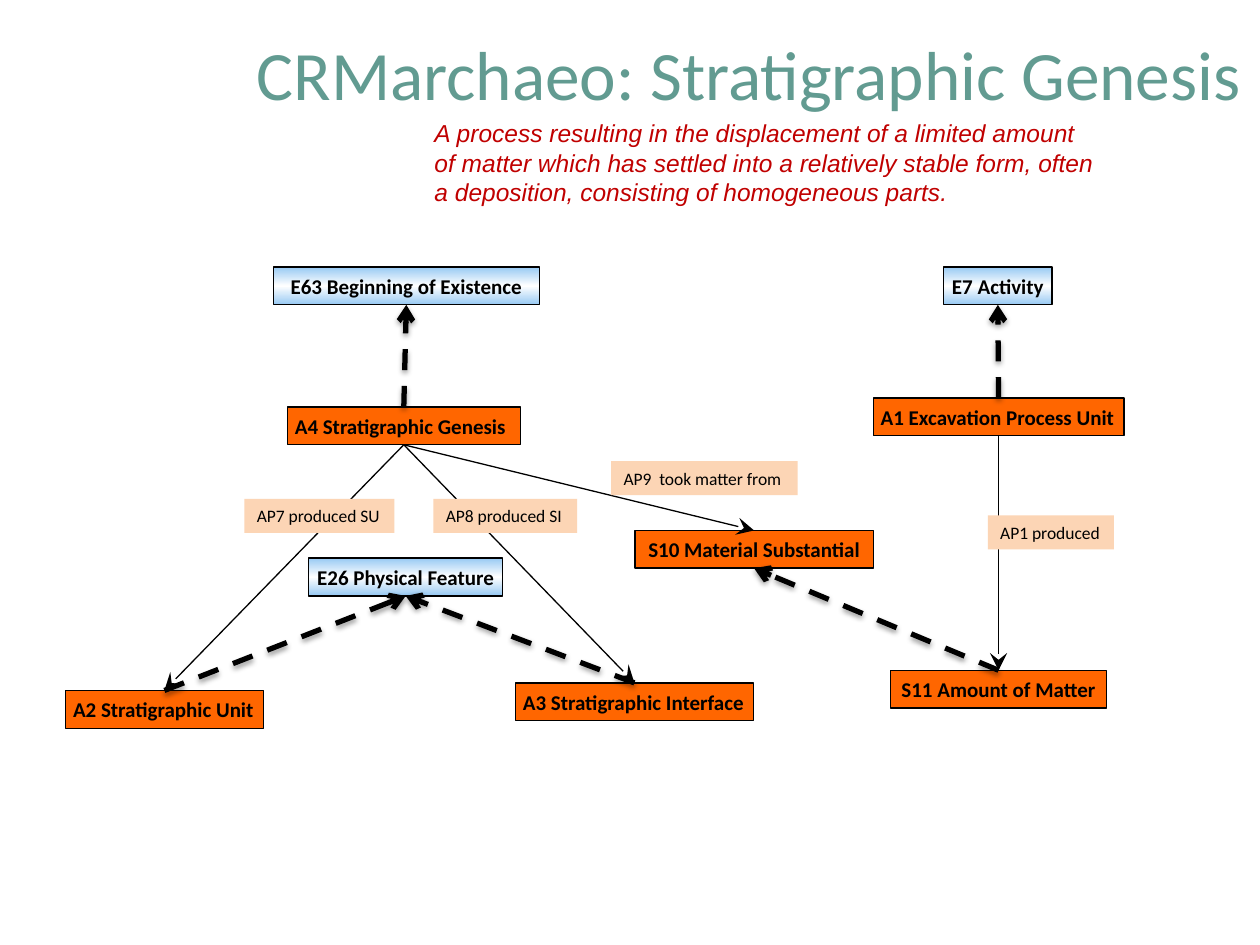
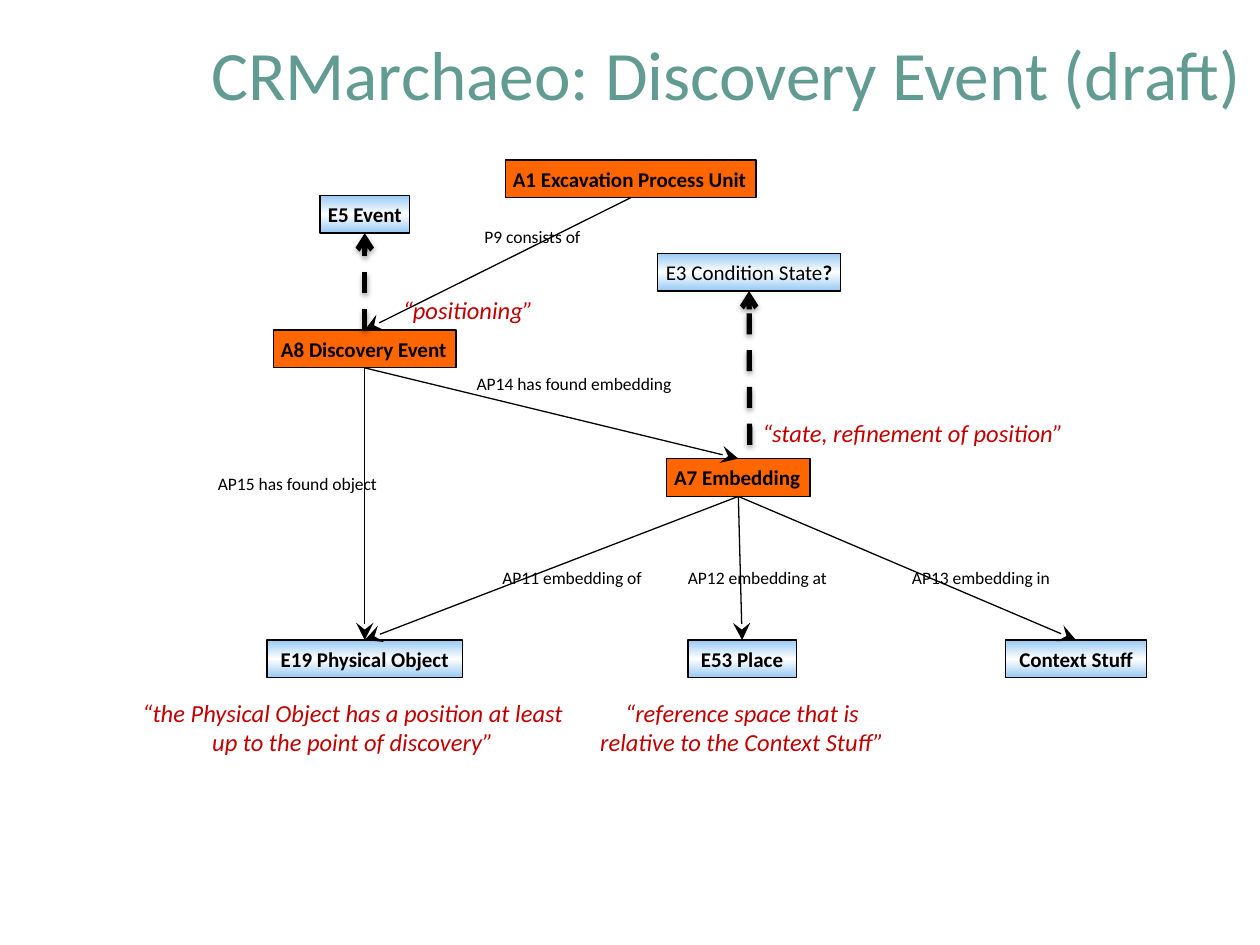
"""Build two CRMarchaeo class diagrams with their properties and subclass links."""
from copy import deepcopy

from lxml.etree import SubElement
from pptx import Presentation
from pptx.dml.color import RGBColor
from pptx.enum.dml import MSO_LINE
from pptx.enum.shapes import MSO_CONNECTOR, MSO_SHAPE
from pptx.enum.text import MSO_ANCHOR, MSO_AUTO_SIZE, PP_ALIGN
from pptx.oxml.ns import qn
from pptx.util import Inches, Pt

TEAL = RGBColor(0x62, 0x9B, 0x91)
RED = RGBColor(0xC0, 0x00, 0x00)
ORANGE = RGBColor(0xFF, 0x66, 0x00)
SKY = RGBColor(0x97, 0xC9, 0xF3)
PEACH = RGBColor(0xFC, 0xD5, 0xB5)
WHITE = RGBColor(0xFF, 0xFF, 0xFF)
BLACK = RGBColor(0x00, 0x00, 0x00)

COLUMNS, ROWS = 10, 7.5
TITLE_PLACE = (0.7, 0.26, 9.25, 0.63)
BOX_HEIGHT = 0.3
LABEL_HEIGHT = 0.27
NOTE_LINE = 0.23
NOTE_MARGIN = 0.11

GENESIS = {
    "title": "CRMarchaeo: Stratigraphic Genesis",
    "definition": (
        "A process resulting in the displacement of a limited amount of matter which has settled "
        "into a relatively stable form, often a deposition, consisting of homogeneous parts.",
        (3.35, 0.89, 5.5, 0.81),
    ),
    "classes": {
        "E63": ("E63 Beginning of Existence", 2.17, 2.12, 2.11),
        "E7": ("E7 Activity", 7.49, 2.12, 0.86),
        "E26": ("E26 Physical Feature", 2.45, 4.43, 1.54),
        "A1": ("A1 Excavation Process Unit", 6.93, 3.16, 1.99),
        "A2": ("A2 Stratigraphic Unit", 0.52, 5.48, 1.57),
        "A3": ("A3 Stratigraphic Interface", 4.09, 5.42, 1.89),
        "A4": ("A4 Stratigraphic Genesis", 2.28, 3.23, 1.85),
        "S10": ("S10 Material Substantial", 5.04, 4.21, 1.89),
        "S11": ("S11 Amount of Matter", 7.07, 5.32, 1.71),
    },
    "subclasses": [("A3", "E26"), ("A2", "E26"), ("A4", "E63"), ("A1", "E7"), ("S11", "S10")],
    "properties": [("A4", "A2"), ("A4", "A3"), ("A4", "S10"), ("A1", "S11")],
    "labels": [
        ("AP7 produced SU", 1.94, 3.96, 1.19),
        ("AP8 produced SI", 3.44, 3.96, 1.14),
        ("AP9  took matter from", 4.85, 3.66, 1.48),
        ("AP1 produced", 7.84, 4.09, 1),
    ],
    "label_fill": PEACH,
    "label_align": PP_ALIGN.LEFT,
    "notes": [],
}

DISCOVERY = {
    "title": "CRMarchaeo: Discovery Event (draft)",
    "definition": None,
    "classes": {
        "A1": ("A1 Excavation Process Unit", 4.01, 1.27, 1.99),
        "E5": ("E5 Event", 2.54, 1.55, 0.71),
        "E3": ([("E3 Condition State", False), ("?", True)], 5.22, 2.01, 1.45),
        "A8": ("A8 Discovery Event", 2.17, 2.62, 1.45),
        "A7": ("A7 Embedding", 5.29, 3.64, 1.14),
        "E19": ("E19 Physical Object", 2.12, 5.08, 1.55),
        "E53": ("E53 Place", 5.46, 5.08, 0.86),
        "Context": ("Context Stuff", 7.98, 5.08, 1.12),
    },
    "subclasses": [("A8", "E5"), ((5.95, 3.53), "E3")],
    "properties": [("A1", "A8"), ("A8", "A7"), ("A8", "E19"),
                   ("A7", "E19"), ("A7", "E53"), ("A7", "Context")],
    "labels": [
        ("P9 consists of", 3.74, 1.74, 0.97),
        ("AP14 has found embedding", 3.67, 2.91, 1.77),
        ("AP15 has found object", 1.62, 3.7, 1.48),
        ("AP11 embedding of", 3.88, 4.45, 1.32),
        ("AP12 embedding at", 5.35, 4.45, 1.32),
        ("AP13 embedding in", 7.13, 4.45, 1.31),
    ],
    "label_fill": None,
    "label_align": PP_ALIGN.CENTER,
    "notes": [
        (["“positioning”"], 3.09, 2.29, 1.25),
        (["“state, refinement of position”"], 5.94, 3.27, 2.61),
        (["“the Physical Object has a position at least", "up to the point of discovery”"],
         0.99, 5.49, 3.62),
        (["“reference space that is", "relative to the Context Stuff”"], 4.65, 5.49, 2.48),
    ],
}


def write_text(shape, lines, size, color=BLACK, font="Calibri", bold=False, italic=False,
               align=PP_ALIGN.CENTER, anchor=MSO_ANCHOR.TOP, wrap=False, grow=True, margins=None):
    """Fill a shape with lines, each a string or a list of (text, bold) runs."""
    frame = shape.text_frame
    frame.word_wrap = wrap
    frame.auto_size = MSO_AUTO_SIZE.SHAPE_TO_FIT_TEXT if grow else MSO_AUTO_SIZE.NONE
    frame.vertical_anchor = anchor
    if margins:
        frame.margin_left = frame.margin_right = Inches(margins[0])
        frame.margin_top = frame.margin_bottom = Inches(margins[1])
    for index, line in enumerate(lines):
        paragraph = frame.add_paragraph() if index else frame.paragraphs[0]
        paragraph.alignment = align
        for text, run_bold in [(line, bold)] if isinstance(line, str) else line:
            run = paragraph.add_run()
            run.text = text
            run.font.name = font
            run.font.size = Pt(size)
            run.font.bold = run_bold
            run.font.italic = italic
            run.font.color.rgb = color


def add_text(slide, lines, place, **text_format):
    """Add a text box."""
    box = slide.shapes.add_textbox(*map(Inches, place))
    write_text(box, lines, **text_format)
    return box


def fill_sky_gradient(shape):
    """Give a shape the vertical sky, white, sky gradient."""
    shape.fill.gradient()
    stop_list = shape.element.spPr.find(".//" + qn("a:gsLst"))
    stop_list.insert(1, deepcopy(stop_list[0]))
    for stop, position, color in zip(shape.fill.gradient_stops, (0, 0.5, 1), (SKY, WHITE, SKY)):
        stop.position = position
        stop.color.rgb = color
    shape.fill.gradient_angle = 90


def add_class(slide, name, text, left, top, width):
    """Add a class box: orange for the archaeology classes, sky for the others."""
    place = (left, top, width, BOX_HEIGHT)
    shape = slide.shapes.add_shape(MSO_SHAPE.RECTANGLE, *map(Inches, place))
    shape.shadow.inherit = False
    if name[0] in "AS":
        shape.fill.solid()
        shape.fill.fore_color.rgb = ORANGE
    else:
        fill_sky_gradient(shape)
    shape.line.color.rgb = BLACK
    shape.line.width = Pt(0.75)
    align = PP_ALIGN.LEFT if name[0] == "A" else PP_ALIGN.CENTER
    write_text(shape, [text], size=12, bold=True, align=align, margins=(0.06, 0.05))


def add_arrow(slide, start, end, subclass=False):
    """Add a thin property arrow or a thick dashed subclass arrow."""
    arrow = slide.shapes.add_connector(MSO_CONNECTOR.STRAIGHT, *map(Inches, start + end))
    arrow.line.color.rgb = BLACK
    arrow.line.width = Pt(3 if subclass else 0.75)
    if subclass:
        arrow.line.dash_style = MSO_LINE.DASH
    properties = arrow.element.spPr
    head_size = "med" if subclass else "lg"
    SubElement(properties.find(qn("a:ln")), qn("a:tailEnd"),
               type="arrow" if subclass else "stealth", w=head_size, len=head_size)
    effects = SubElement(properties, qn("a:effectLst"))
    if subclass:
        shadow = SubElement(effects, qn("a:outerShdw"), blurRad=str(Pt(3.1)), dist=str(Pt(1.6)),
                            dir="5400000", rotWithShape="0")
        shade = SubElement(shadow, qn("a:srgbClr"), val=str(BLACK))
        SubElement(shade, qn("a:alpha"), val="38000")


def build_diagram(presentation, diagram):
    """Add one slide with its title, classes, arrows, labels and notes."""
    slide = presentation.slides.add_slide(presentation.slide_layouts[6])
    slide.background.fill.solid()
    slide.background.fill.fore_color.rgb = WHITE
    classes = diagram["classes"]

    def top_of(name):
        _, left, top, width = classes[name]
        return left + width / 2, top

    def bottom_of(name):
        center, top = top_of(name)
        return center, top + BOX_HEIGHT

    add_text(slide, [diagram["title"]], TITLE_PLACE, size=39.6, color=TEAL,
             align=PP_ALIGN.RIGHT, anchor=MSO_ANCHOR.MIDDLE, wrap=True, grow=False)
    if diagram["definition"]:
        text, place = diagram["definition"]
        add_text(slide, [text], place, size=14, color=RED, font="Arial", italic=True,
                 align=PP_ALIGN.LEFT, wrap=True)
    for name, box in classes.items():
        add_class(slide, name, *box)
    for source, target in diagram["properties"]:
        add_arrow(slide, bottom_of(source), top_of(target))
    for child, parent in diagram["subclasses"]:
        start = top_of(child) if isinstance(child, str) else child
        add_arrow(slide, start, bottom_of(parent), subclass=True)
    for text, left, top, width in diagram["labels"]:
        label = add_text(slide, [text], (left, top, width, LABEL_HEIGHT), size=10,
                         align=diagram["label_align"], anchor=MSO_ANCHOR.MIDDLE)
        if diagram["label_fill"]:
            label.fill.solid()
            label.fill.fore_color.rgb = diagram["label_fill"]
    for lines, left, top, width in diagram["notes"]:
        height = len(lines) * NOTE_LINE + NOTE_MARGIN
        add_text(slide, lines, (left, top, width, height), size=14, color=RED, italic=True)


def main():
    """Build and save the presentation."""
    presentation = Presentation()
    presentation.slide_width = Inches(COLUMNS)
    presentation.slide_height = Inches(ROWS)
    for diagram in (GENESIS, DISCOVERY):
        build_diagram(presentation, diagram)
    presentation.save("out.pptx")


if __name__ == "__main__":
    main()
